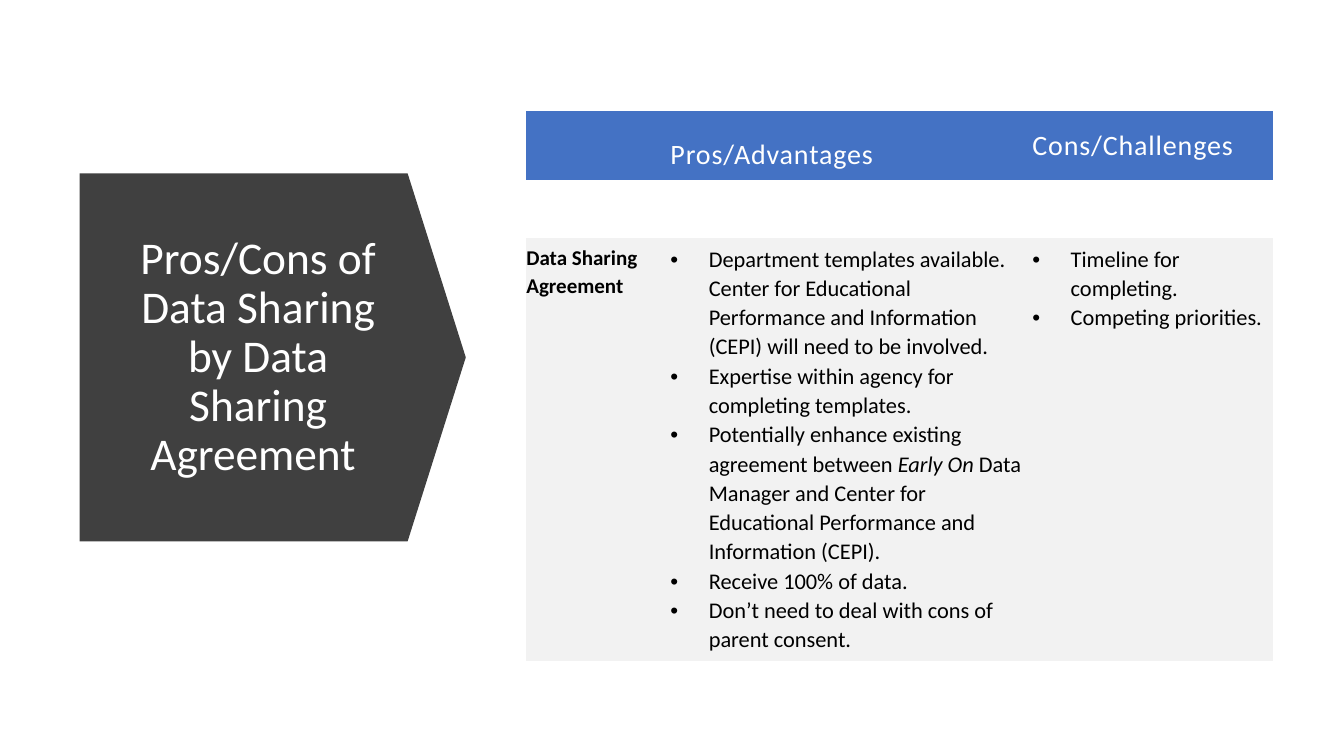
from pptx import Presentation, util as u
from pptx.dml import color
from pptx.enum import shapes, text
from pptx.oxml import ns
from lxml import etree

PROS = [
    ["Department templates available. Center for Educational Performance "
     "and Information (CEPI) will need to be involved."],
    ["Expertise within agency for completing templates."],
    ["Potentially enhance existing agreement between ", "Early On ",
     "Data Manager and Center for Educational Performance and Information (CEPI)."],
    ["Receive 100% of data."],
    ["Don’t need to deal with cons of parent consent."],
]
CONS = [["Timeline for completing."], ["Competing priorities."]]
SLANT = "Early On "
PLAIN = "{2D5ABB26-0587-4C30-8999-92F81FD0307C}"  # no style, no grid


def rgb(code):
    return color.RGBColor.from_string(code)


class Deck:
    font, white, black = "Calibri", "FFFFFF", "000000"
    dark, blue, gray = "404040", "4472C4", "F2F2F2"

    def __init__(self):
        self.prs = Presentation()
        self.prs.slide_width = u.Inches(13.33)
        self.prs.slide_height = u.Inches(7.5)
        self.slide = self.prs.slides.add_slide(self.prs.slide_layouts[6])

    def style(self, para, size, ink, bold=False, lead=1.07):
        para.line_spacing = lead
        font = para.font
        font.name, font.size, font.bold = self.font, u.Pt(size), bold
        font.color.rgb = rgb(ink)

    def arrow(self, left, top, width, height):
        shape = self.slide.shapes.add_shape(
            shapes.MSO_SHAPE.DOWN_ARROW, *map(u.Inches, (left, top, width, height)))
        shape.rotation = 270
        shape.adjustments[0], shape.adjustments[1] = 1, 0.158
        shape.shadow.inherit = False
        shape.fill.solid()
        shape.fill.fore_color.rgb = rgb(self.dark)
        shape.line.fill.background()

    def title(self, words, left, top, width, height):
        box = self.slide.shapes.add_textbox(
            *map(u.Inches, (left, top, width, height)))
        frame = box.text_frame
        frame.word_wrap = True
        frame.vertical_anchor = text.MSO_ANCHOR.MIDDLE
        para = frame.paragraphs[0]
        para.text = words
        para.alignment = text.PP_ALIGN.CENTER
        self.style(para, 32.4, self.white, lead=0.9)

    def table(self, left, top, cols, rows):
        grid = self.slide.shapes.add_table(
            len(rows), len(cols), *map(u.Inches, (left, top, sum(cols), sum(rows)))).table
        grid.first_row = grid.horz_banding = False
        grid._tbl.tblPr.find(ns.qn("a:tableStyleId")).text = PLAIN
        for col, width in zip(grid.columns, cols):
            col.width = u.Inches(width)
        for row, height in zip(grid.rows, rows):
            row.height = u.Inches(height)
        for cell in grid.iter_cells():
            cell.margin_left, cell.margin_top = 0, u.Inches(0.06)
            cell.margin_right, cell.margin_bottom = u.Inches(0.05), u.Inches(0.07)
            cell.fill.background()
        return grid

    def paint(self, row, fill):
        for cell in row.cells:
            cell.fill.solid()
            cell.fill.fore_color.rgb = rgb(fill)

    def head(self, cell, words):
        cell.vertical_anchor = text.MSO_ANCHOR.MIDDLE
        para = cell.text_frame.paragraphs[0]
        run = para.add_run()
        run.text = words
        run.font._element.set("spc", "60")
        self.style(para, 20, self.white)

    def label(self, cell, words):
        para = cell.text_frame.paragraphs[0]
        para.text = words
        self.style(para, 15, self.black, bold=True)

    def bullets(self, cell, items):
        frame = cell.text_frame
        for i, parts in enumerate(items):
            para = frame.add_paragraph() if i else frame.paragraphs[0]
            props = para._p.get_or_add_pPr()
            props.set("marL", str(u.Inches(0.38)))
            props.set("indent", str(u.Inches(-0.38)))
            etree.SubElement(props, ns.qn("a:buFont"), typeface="Arial")
            etree.SubElement(props, ns.qn("a:buChar"), char="•")
            for part in parts:
                run = para.add_run()
                run.text = part
                if part == SLANT:
                    run.font.italic = True
            self.style(para, 16, self.black)


def main():
    deck = Deck()

    # Arrow panel with the title
    deck.arrow(0.88, 1.63, 3.65, 3.83)
    deck.title("Pros/Cons of Data Sharing by Data Sharing Agreement ",
               1.12, 2.15, 2.88, 2.79)

    # Table: heading row, open gap, content row
    grid = deck.table(5.22, 1.1, [1.43, 3.59, 2.39], [0.69, 0.57, 4.2])
    deck.paint(grid.rows[0], deck.blue)
    deck.paint(grid.rows[2], deck.gray)
    deck.head(grid.cell(0, 1), "Pros/Advantages")
    grid.cell(0, 1).margin_top = u.Inches(0.24)  # sits lower than its neighbour
    deck.head(grid.cell(0, 2), "Cons/Challenges")
    deck.label(grid.cell(2, 0), "Data Sharing Agreement")
    deck.bullets(grid.cell(2, 1), PROS)
    deck.bullets(grid.cell(2, 2), CONS)

    deck.prs.save("out.pptx")


if __name__ == "__main__":
    main()
